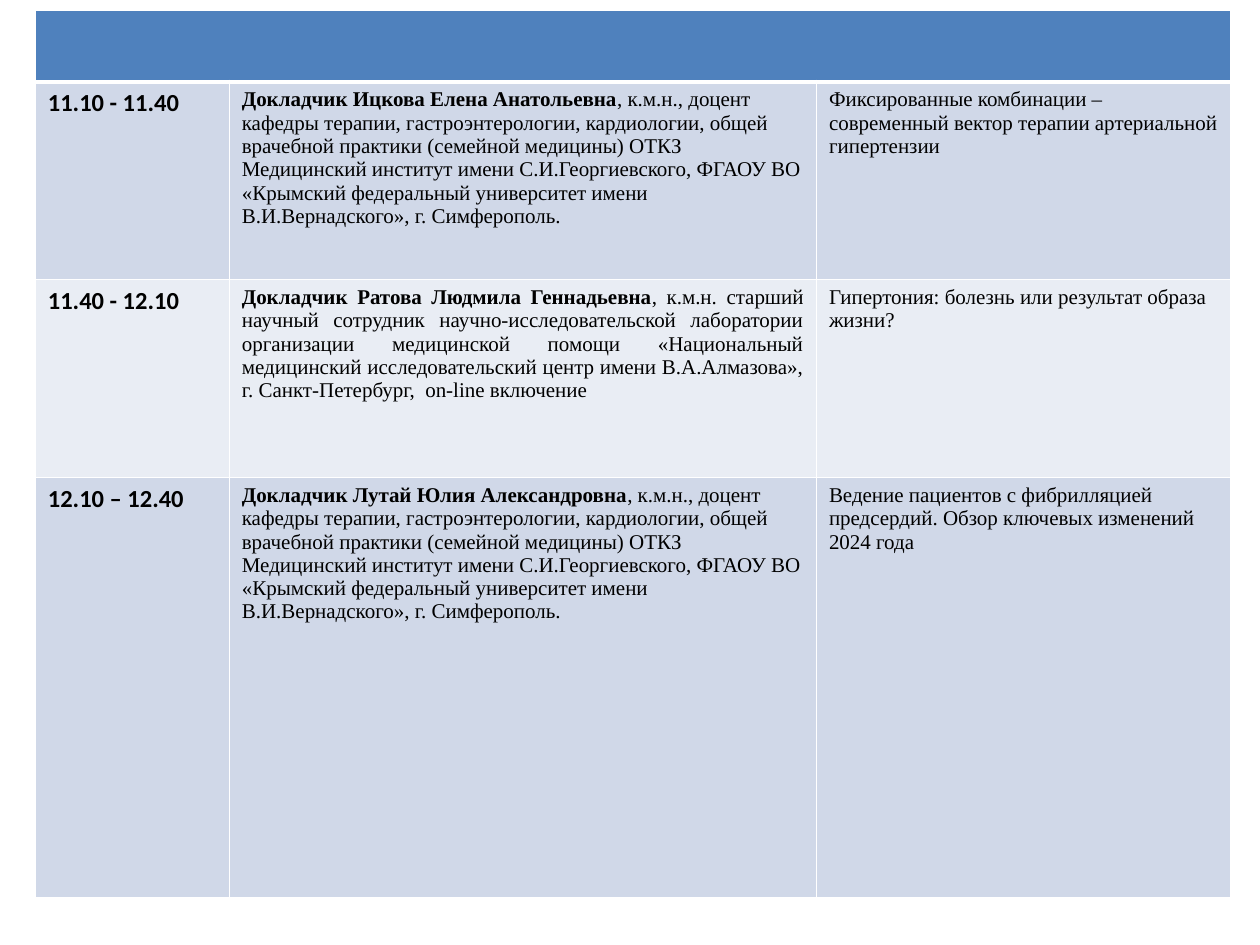
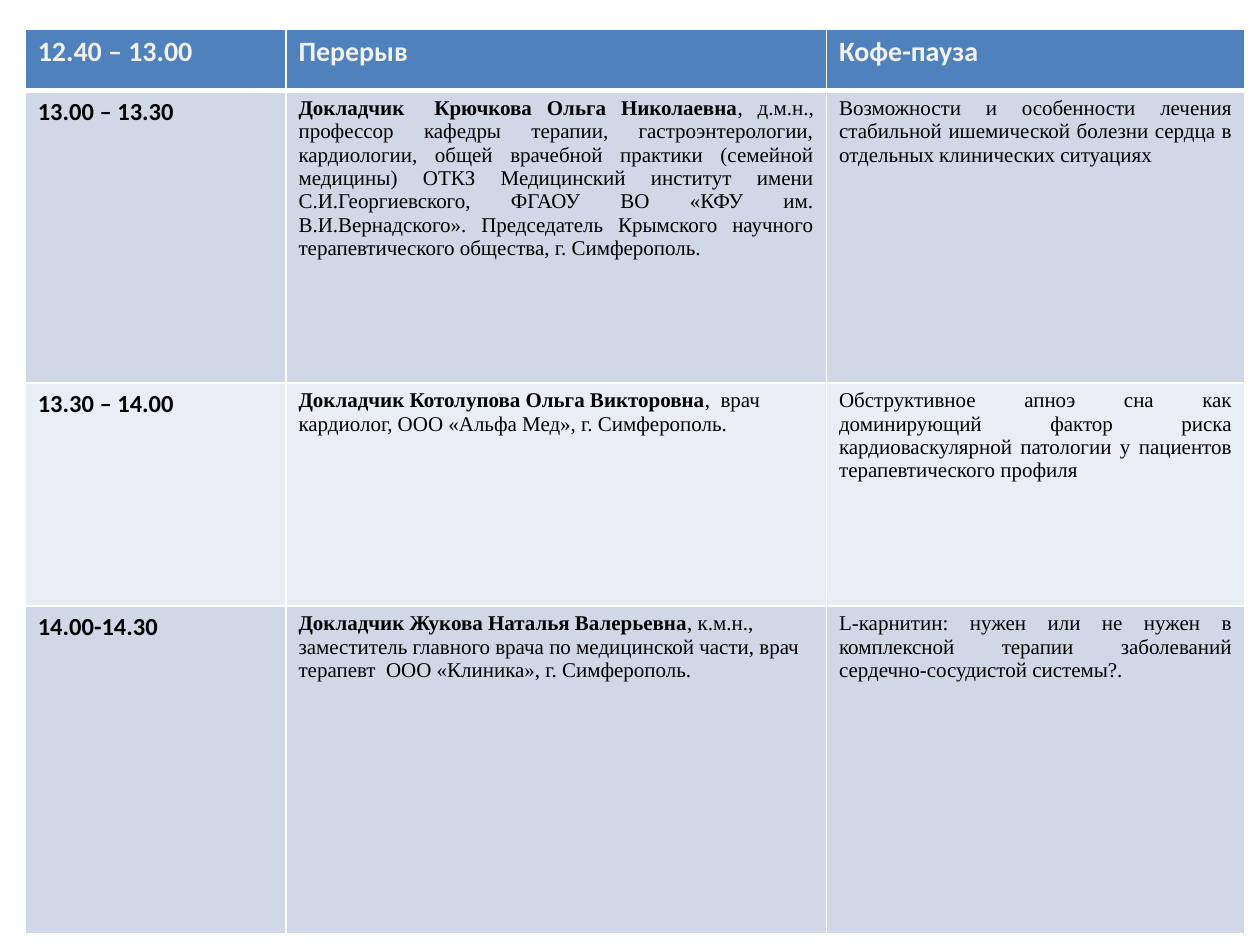
import pptx
import pptx.util
import pptx.dml.color
import pptx.enum.text
import pptx.oxml
import pptx.oxml.ns
from pptx.util import Inches, Pt

RGBColor = pptx.dml.color.RGBColor
ALIGN = pptx.enum.text.PP_ALIGN
LEFT, JUST = ALIGN.LEFT, ALIGN.JUSTIFY

# Shared look
BLUE = RGBColor(0x4F, 0x81, 0xBD)
BANDS = (RGBColor(0xD0, 0xD8, 0xE8), RGBColor(0xE9, 0xED, 0xF4))
WHITE = RGBColor(0xFF, 0xFF, 0xFF)
PALE = RGBColor(0xF2, 0xF2, 0xF2)
BLACK = RGBColor(0, 0, 0)
SANS, SERIF = "Calibri", "Times New Roman"

# Wording used by two speakers
CHAIR = (", к.м.н., доцент кафедры терапии, гастроэнтерологии, кардиологии, "
         "общей врачебной практики (семейной медицины) ОТКЗ Медицинский институт "
         "имени С.И.Георгиевского, ФГАОУ ВО «Крымский федеральный университет "
         "имени В.И.Вернадского», г. Симферополь.")

# Each talk: time, speaker, post, post alignment, topic, topic alignment
MORNING = [
    ("11.10 - 11.40", "Докладчик Ицкова Елена Анатольевна", CHAIR, LEFT,
     "Фиксированные комбинации – современный вектор терапии артериальной "
     "гипертензии", LEFT),
    ("11.40 - 12.10", "Докладчик Ратова Людмила Геннадьевна",
     ", к.м.н. старший научный сотрудник научно-исследовательской лаборатории "
     "организации медицинской помощи «Национальный медицинский исследовательский "
     "центр имени В.А.Алмазова», г. Санкт-Петербург,  on-line включение", JUST,
     "Гипертония: болезнь или результат образа жизни?", LEFT),
    ("12.10 – 12.40", "Докладчик Лутай Юлия Александровна", CHAIR, LEFT,
     "Ведение пациентов с фибрилляцией предсердий. Обзор ключевых изменений "
     "2024 года", LEFT),
]
BREAK = ("12.40 – 13.00", "Перерыв", "Кофе-пауза")
MIDDAY = [
    ("13.00 – 13.30", "Докладчик  Крючкова Ольга Николаевна",
     ", д.м.н., профессор кафедры терапии, гастроэнтерологии, кардиологии, общей "
     "врачебной практики (семейной медицины) ОТКЗ Медицинский институт имени "
     "С.И.Георгиевского, ФГАОУ ВО «КФУ им. В.И.Вернадского». Председатель Крымского "
     "научного терапевтического общества, г. Симферополь.", JUST,
     "Возможности и особенности лечения стабильной ишемической болезни сердца в "
     "отдельных клинических ситуациях", JUST),
    ("13.30 – 14.00", "Докладчик Котолупова Ольга Викторовна",
     ",  врач кардиолог, ООО «Альфа Мед», г. Симферополь.", LEFT,
     "Обструктивное апноэ сна как доминирующий фактор риска кардиоваскулярной "
     "патологии у пациентов терапевтического профиля", JUST),
    ("14.00-14.30", "Докладчик Жукова Наталья Валерьевна",
     ", к.м.н., заместитель главного врача по медицинской части, врач терапевт  "
     "ООО «Клиника», г. Симферополь.", LEFT,
     "L-карнитин: нужен или не нужен в комплексной терапии заболеваний "
     "сердечно-сосудистой системы?.", JUST),
]


def write(cell, parts, size, font, color=BLACK, align=LEFT):
    """Fill a cell with (text, bold) parts in one paragraph."""
    para = cell.text_frame.paragraphs[0]
    para.alignment = align
    for text, bold in parts:
        run = para.add_run()
        run.text = text
        run.font.size, run.font.name, run.font.bold = Pt(size), font, bold
        run.font.color.rgb = color


def paint(cell, color, top=1, bottom=1):
    """Set a cell's fill and its white borders, widths in points."""
    cell.fill.solid()
    cell.fill.fore_color.rgb = color
    props = cell._tc.get_or_add_tcPr()
    sides = (("L", 1), ("R", 1), ("T", top), ("B", bottom))
    for spot, (side, width) in enumerate(sides):
        props.insert(spot, pptx.oxml.parse_xml(
            f'<a:ln{side} {pptx.oxml.ns.nsdecls("a")} w="{Pt(width)}">'
            f'<a:solidFill><a:srgbClr val="{WHITE}"/></a:solidFill></a:ln{side}>'))


def add_head(table, head):
    """Blue top row: three labels, or one empty merged band."""
    cells = list(table.rows[0].cells)
    for cell in cells:
        paint(cell, BLUE, bottom=3)
    if head:
        for cell, text in zip(cells, head):
            write(cell, [(text, True)], 16, SANS, PALE)
    else:
        cells[0].merge(cells[-1])


def add_talk(table, row, talk):
    """One banded row with time, speaker and topic."""
    time, name, post, post_al, topic, topic_al = talk
    cells = list(table.rows[row].cells)
    for cell in cells:
        paint(cell, BANDS[(row - 1) % 2], top=3 if row == 1 else 1)
    write(cells[0], [(time, True)], 14, SANS)
    write(cells[1], [(name, True), (post, False)], 12, SERIF, align=post_al)
    write(cells[2], [(topic, False)], 12, SERIF, align=topic_al)


def add_plan(deck, left, top, cols, rows, head, talks):
    """Schedule slide: a table at left, top with the given column and row sizes."""
    slide = deck.slides.add_slide(deck.slide_layouts[6])
    table = slide.shapes.add_table(
        len(rows), len(cols), Inches(left), Inches(top),
        Inches(sum(cols)), Inches(sum(rows))).table
    for col, width in zip(table.columns, cols):
        col.width = Inches(width)
    for line, height in zip(table.rows, rows):
        line.height = Inches(height)
    add_head(table, head)
    for row, talk in enumerate(talks, 1):
        add_talk(table, row, talk)


def main():
    deck = pptx.Presentation()
    deck.slide_width, deck.slide_height = Inches(10), Inches(7.5)
    add_plan(deck, 0.28, 0.08, (1.54, 4.66, 3.29), (0.57, 1.57, 1.57, 3.34),
             None, MORNING)
    add_plan(deck, 0.2, 0.23, (2.07, 4.29, 3.32), (0.49, 2.32, 1.77, 2.6),
             BREAK, MIDDAY)
    deck.save("out.pptx")


if __name__ == "__main__":
    main()
